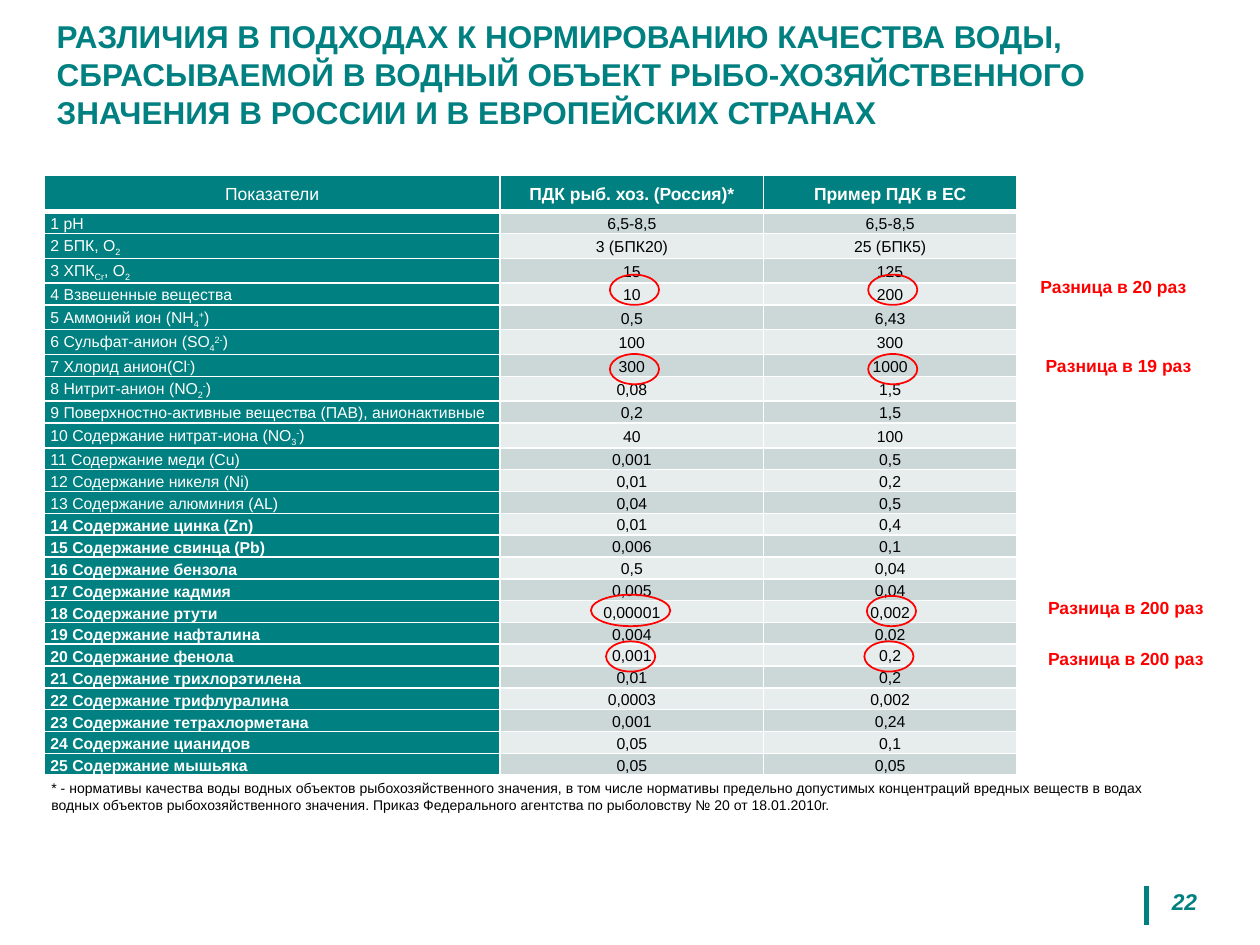
from lxml import etree
from pptx import Presentation
from pptx import util as u
from pptx.dml import color
from pptx.enum import shapes, text
from pptx.oxml import ns

COLORS = {"teal": "008080", "white": "FFFFFF", "black": "000000", "red": "FF0000",
          "odd": "CCD8D8", "even": "E7EDED"}
BASELINES = {"_": "-25000", "^": "30000"}
TITLE = ("РАЗЛИЧИЯ В ПОДХОДАХ К НОРМИРОВАНИЮ КАЧЕСТВА ВОДЫ, СБРАСЫВАЕМОЙ В ВОДНЫЙ ОБЪЕКТ "
         "РЫБО-ХОЗЯЙСТВЕННОГО ЗНАЧЕНИЯ В РОССИИ И В ЕВРОПЕЙСКИХ СТРАНАХ")
FOOTNOTE = ("* - нормативы качества воды водных объектов рыбохозяйственного значения, в том числе "
            "нормативы предельно допустимых концентраций вредных веществ в водах водных объектов "
            "рыбохозяйственного значения. Приказ Федерального агентства по рыболовству № 20 от "
            "18.01.2010г.")
HEADER = ("Показатели", "ПДК рыб. хоз. (Россия)*", "Пример ПДК в ЕС")
INDICATORS = [
    ("рН", "6,5-8,5", "6,5-8,5"),
    ("БПК, О|_2", "3 (БПК20)", "25 (БПК5)"),
    ("ХПК|_Cr|, О|_2", "15", "125"),
    ("Взвешенные вещества", "10", "200"),
    ("Аммоний ион (NH|_4|^+|)", "0,5", "6,43"),
    ("Сульфат-анион (SO|_4|^2-|)", "100", "300"),
    ("Хлорид анион(Cl|^-|)", "300", "1000"),
    ("Нитрит-анион (NO|_2|^-|)", "0,08", "1,5"),
    ("Поверхностно-активные вещества (ПАВ), анионактивные", "0,2", "1,5"),
    ("Содержание нитрат-иона (NO|_3|^-|)", "40", "100"),
    ("Содержание меди (Cu)", "0,001", "0,5"),
    ("Содержание никеля (Ni)", "0,01", "0,2"),
    ("Содержание алюминия (AL)", "0,04", "0,5"),
    ("Содержание цинка (Zn)", "0,01", "0,4"),
    ("Содержание свинца (Рb)", "0,006", "0,1"),
    ("Содержание бензола", "0,5", "0,04"),
    ("Содержание кадмия", "0,005", "0,04"),
    ("Содержание ртути", "0,00001", "0,002"),
    ("Содержание нафталина", "0,004", "0,02"),
    ("Содержание фенола", "0,001", "0,2"),
    ("Содержание трихлорэтилена", "0,01", "0,2"),
    ("Содержание трифлуралина", "0,0003", "0,002"),
    ("Содержание тетрахлорметана", "0,001", "0,24"),
    ("Содержание цианидов", "0,05", "0,1"),
    ("Содержание мышьяка", "0,05", "0,05"),
]
FIRST_BOLD, FIRST_BOTTOM = 14, 13
OVALS = [(4.84, 2.18, 0.39, 0.24), (6.89, 2.18, 0.39, 0.24),
         (4.84, 2.81, 0.39, 0.24), (6.89, 2.81, 0.39, 0.24),
         (4.69, 4.72, 0.63, 0.25), (6.88, 4.73, 0.39, 0.24),
         (4.81, 5.09, 0.39, 0.24), (6.86, 5.09, 0.39, 0.24)]
NOTES = [(8.16, 2.14, 1.36, 0.27, 20), (8.2, 2.77, 1.36, 0.27, 19),
         (8.22, 4.69, 1.44, 0.27, 200), (8.22, 5.09, 1.44, 0.27, 200)]


def rgb(name):
    """Return the named palette colour."""
    return color.RGBColor.from_string(COLORS[name])


def inches(box):
    """Convert a box in inches to lengths."""
    return [u.Inches(v) for v in box]


def add_run(p, words, size, tint, bold=False, italic=False):
    """Append one formatted run to a paragraph."""
    r = p.add_run()
    r.text = words
    r.font.name, r.font.size = "Arial", u.Pt(size)
    r.font.bold, r.font.italic = bold, italic
    r.font.color.rgb = rgb(tint)
    return r


def add_text(s, box, words, size, tint, bold=False, italic=False, wrap=True, align=None):
    """Place a one-paragraph text box."""
    tf = s.shapes.add_textbox(*inches(box)).text_frame
    tf.word_wrap = wrap
    p = tf.paragraphs[0]
    p.alignment = align
    add_run(p, words, size, tint, bold, italic)


def add_title(s, box):
    """Fill and place the title placeholder."""
    sp = s.shapes.title
    sp.left, sp.top, sp.width, sp.height = inches(box)
    tf = sp.text_frame
    tf.vertical_anchor = text.MSO_ANCHOR.MIDDLE
    p = tf.paragraphs[0]
    p.alignment = text.PP_ALIGN.LEFT
    add_run(p, TITLE, 18, "teal", True)


def add_borders(cell, bottom=1):
    """Draw white borders around a cell."""
    tc_pr = cell._tc.get_or_add_tcPr()
    for side, width in (("lnL", 1), ("lnR", 1), ("lnT", 1), ("lnB", bottom)):
        ln = etree.SubElement(tc_pr, ns.qn(f"a:{side}"), w=str(u.Pt(width)))
        fill = etree.SubElement(ln, ns.qn("a:solidFill"))
        etree.SubElement(fill, ns.qn("a:srgbClr"), val=COLORS["white"])


def fill_cell(cell, words, size, tint, fill, bold, centred, header=False):
    """Format a cell and write its text with subscripts and superscripts."""
    add_borders(cell, 3 if header else 1)
    cell.fill.solid()
    cell.fill.fore_color.rgb = rgb(fill)
    cell.margin_left = cell.margin_right = u.Inches(0.05)
    cell.margin_top = cell.margin_bottom = 0
    cell.vertical_anchor = text.MSO_ANCHOR.MIDDLE
    p = cell.text_frame.paragraphs[0]
    p.line_spacing = 1.15
    p.alignment = text.PP_ALIGN.CENTER if centred else text.PP_ALIGN.LEFT
    for part in words.split("|"):
        shift = BASELINES.get(part[0])
        r = add_run(p, part[1:] if shift else part, size, tint, bold)
        if shift:
            r.font._element.set("baseline", shift)


def add_indicator_table(s, box):
    """Build the table of water quality limits."""
    rows = len(INDICATORS) + 1
    table = s.shapes.add_table(rows, len(HEADER), *inches(box)).table
    for column, width in zip(table.columns, (3.62, 2.09, 2.01)):
        column.width = u.Inches(width)
    for i, row in enumerate(table.rows):
        row.height = u.Inches(0.14 if i else 0.29)
    for j, words in enumerate(HEADER):
        fill_cell(table.cell(0, j), words, 10, "white", "teal", j > 0, True, True)
    for i, (label, *limits) in enumerate(INDICATORS, 1):
        cell = table.cell(i, 0)
        fill_cell(cell, f"{i} {label}", 9, "white", "teal", i >= FIRST_BOLD, False)
        if i >= FIRST_BOTTOM:
            cell.vertical_anchor = text.MSO_ANCHOR.BOTTOM
        for j, limit in enumerate(limits, 1):
            fill_cell(table.cell(i, j), limit, 9, "black", "odd" if i % 2 else "even", False, True)


def add_oval(s, box):
    """Ring a value with a red ellipse."""
    sp = s.shapes.add_shape(shapes.MSO_SHAPE.OVAL, *inches(box))
    sp.shadow.inherit = False
    sp.fill.background()
    sp.line.color.rgb = rgb("red")
    sp.line.width = u.Pt(1)


def add_page_number(s, box):
    """Place the page number and the bar to its left."""
    left, top, _, height = box
    x = left - 0.03
    bar = s.shapes.add_connector(shapes.MSO_CONNECTOR.STRAIGHT,
                                 *inches((x, top + 0.03, x, top + height)))
    bar.line.color.rgb = rgb("teal")
    bar.line.width = u.Pt(3)
    etree.SubElement(bar._element.spPr, ns.qn("a:effectLst"))
    add_text(s, box, "22", 13, "teal", True, True, align=text.PP_ALIGN.CENTER)


def main():
    """Build and save the slide."""
    prs = Presentation()
    prs.slide_width, prs.slide_height = u.Inches(10), u.Inches(7.5)
    s = prs.slides.add_slide(prs.slide_layouts[5])
    add_page_number(s, (9.13, 7, 0.54, 0.34))
    add_title(s, (0.35, 0.13, 9.44, 0.91))
    add_indicator_table(s, (0.35, 1.39, 7.72, 3.79))
    add_text(s, (0.31, 6.14, 9.06, 0.37), FOOTNOTE, 8, "black")
    for box in OVALS:
        add_oval(s, box)
    for *box, times in NOTES:
        add_text(s, box, f"Разница в {times} раз", 10, "red", True, wrap=False)
    prs.save("out.pptx")


if __name__ == "__main__":
    main()
